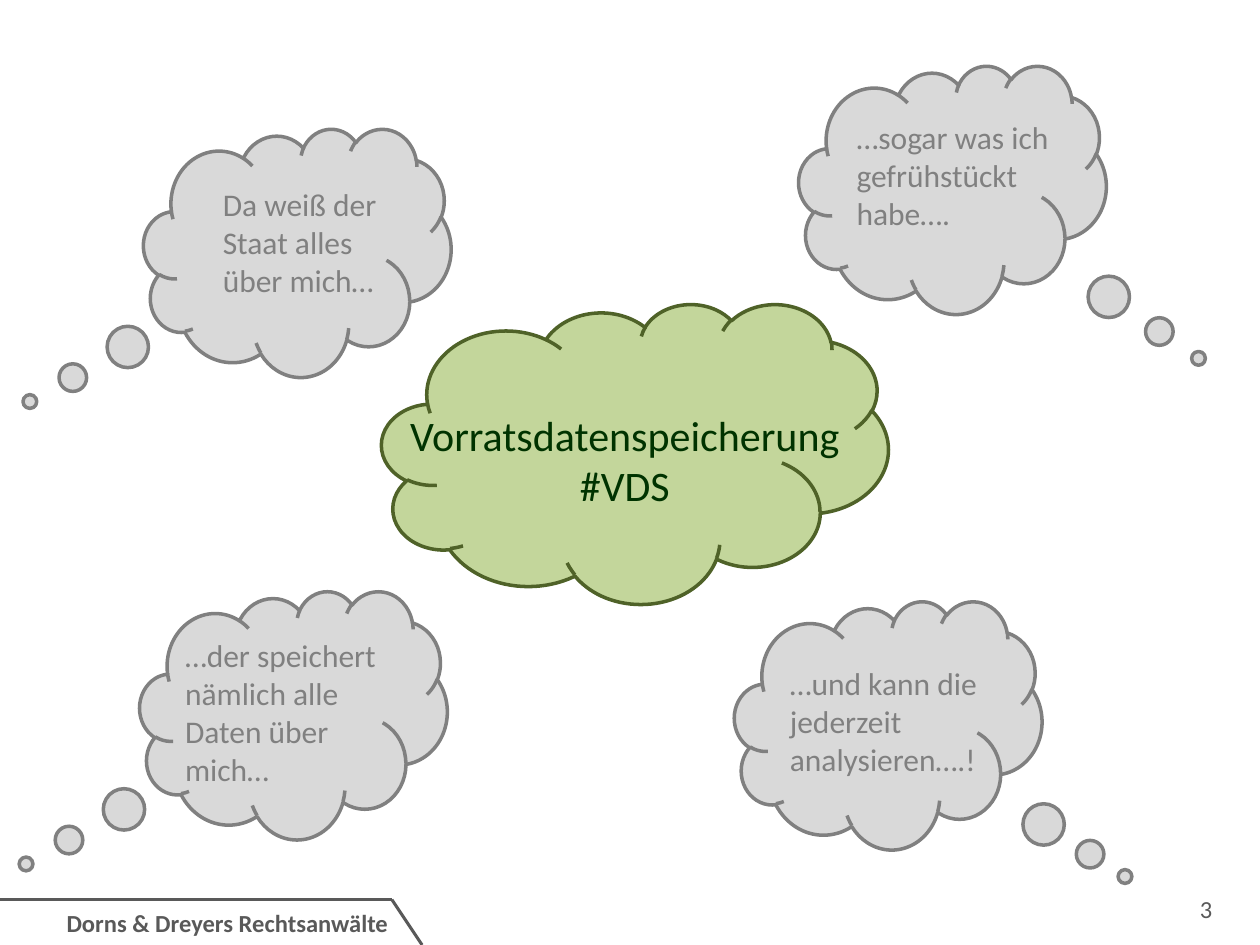
"""Build the slide with a central topic cloud and four thought bubbles."""
import dataclasses
import typing

import pptx
import pptx.dml.color
import pptx.enum.shapes
import pptx.enum.text
import pptx.oxml
import pptx.oxml.ns
import pptx.util

Inches = pptx.util.Inches
Pt = pptx.util.Pt
Align = pptx.enum.text.PP_ALIGN
Preset = pptx.enum.shapes.MSO_SHAPE
Area = tuple[float, float, float, float]

COLORS = {
    "frame": "595959",
    "topic_fill": "C3D69B",
    "topic_line": "4F6228",
    "topic_text": "003300",
    "thought_fill": "D9D9D9",
    "thought": "808080",
}
FONT = "Calibri"
THOUGHT_SIZE = (2.44, 1.97)


@dataclasses.dataclass(frozen=True)
class Thought:
    """A thought bubble, its tail position and its text area."""

    left: float
    top: float
    tail: tuple[float, float]
    text: str
    text_area: Area


THOUGHTS = [
    Thought(6.34, 0.52, (0.8, 0.68), "…sogar was ich gefrühstückt habe….", (6.7, 0.89, 1.91, 1.01)),
    Thought(1.14, 1.02, (-0.87, 0.6), "Da weiß der Staat alles über mich…", (1.67, 1.42, 1.5, 1.01)),
    Thought(1.11, 4.69, (-0.87, 0.6), "…der speichert nämlich alle Daten über mich…", (1.37, 5, 1.91, 1.31)),
    Thought(5.83, 4.77, (0.77, 0.61), "…und kann die jederzeit analysieren….!", (6.17, 5.22, 1.91, 1.01)),
]


def rgb(name: str) -> pptx.dml.color.RGBColor:
    """Return the named colour."""
    return pptx.dml.color.RGBColor.from_string(COLORS[name])


def add_text(shapes: typing.Any, area: Area, text: str, *, size: float, color: str,
             bold: bool = False, align: Align = Align.LEFT,
             wrap: bool = True, grow: bool = True) -> None:
    """Add a text box with one paragraph for each line of text."""
    box = shapes.add_textbox(*map(Inches, area))
    frame = box.text_frame
    frame.text = text
    frame.word_wrap = wrap
    if grow:
        frame.auto_size = pptx.enum.text.MSO_AUTO_SIZE.SHAPE_TO_FIT_TEXT
    for para in frame.paragraphs:
        para.alignment = align
        for span in para.runs:
            span.font.name = FONT
            span.font.size = Pt(size)
            span.font.bold = bold
            span.font.color.rgb = rgb(color)


def add_cloud(shapes: typing.Any, preset: Preset, area: Area, *, fill: str, line: str) -> typing.Any:
    """Add a filled and outlined cloud."""
    cloud = shapes.add_shape(preset, *map(Inches, area))
    cloud.shadow.inherit = False
    cloud.fill.solid()
    cloud.fill.fore_color.rgb = rgb(fill)
    cloud.line.color.rgb = rgb(line)
    cloud.line.width = Pt(2)
    return cloud


def add_line(shapes: typing.Any, start: tuple[float, float], end: tuple[float, float]) -> None:
    """Add one edge of the footer tab."""
    line = shapes.add_connector(pptx.enum.shapes.MSO_CONNECTOR.STRAIGHT, *map(Inches, start + end))
    line.line.color.rgb = rgb("frame")
    line.line.width = Pt(1.75)
    properties = line._element.spPr
    properties.append(properties.makeelement(pptx.oxml.ns.qn("a:effectLst"), {}))


def add_footer(shapes: typing.Any) -> None:
    """Add the footer tab, the firm and the page number."""
    corner = (3.11, 7.14)
    add_line(shapes, corner, (0, 7.14))
    add_line(shapes, (3.35, 7.5), corner)
    add_text(shapes, (0.43, 7.16, 2.76, 0.34), "Dorns & Dreyers Rechtsanwälte",
             size=14, color="frame", bold=True, wrap=False)
    add_text(shapes, (7.39, 7.05, 2.33, 0.4), "3", size=14, color="frame",
             align=Align.RIGHT, grow=False)


def add_topic(shapes: typing.Any) -> None:
    """Add the central topic cloud."""
    group = shapes.add_group_shape().shapes
    add_cloud(group, Preset.CLOUD, (3.03, 2.41, 4.02, 2.38), fill="topic_fill", line="topic_line")
    add_text(group, (3.11, 3.2, 3.7, 0.91), "Vorratsdatenspeicherung\n#VDS",
             size=24, color="topic_text", align=Align.CENTER)


def add_thought(shapes: typing.Any, thought: Thought) -> None:
    """Add a thought bubble with its text."""
    group = shapes.add_group_shape().shapes
    cloud = add_cloud(group, Preset.CLOUD_CALLOUT, (thought.left, thought.top, *THOUGHT_SIZE),
                      fill="thought_fill", line="thought")
    for index, value in enumerate(thought.tail):
        cloud.adjustments[index] = value
    add_text(group, thought.text_area, thought.text, size=18, color="thought")


def main() -> None:
    """Build and save the deck."""
    deck = pptx.Presentation()
    deck.slide_width = Inches(10)
    deck.slide_height = Inches(7.5)
    page = deck.slides.add_slide(deck.slide_layouts[6])
    add_footer(page.shapes)
    add_topic(page.shapes)
    for thought in THOUGHTS:
        add_thought(page.shapes, thought)
    deck.save("out.pptx")


if __name__ == "__main__":
    main()
